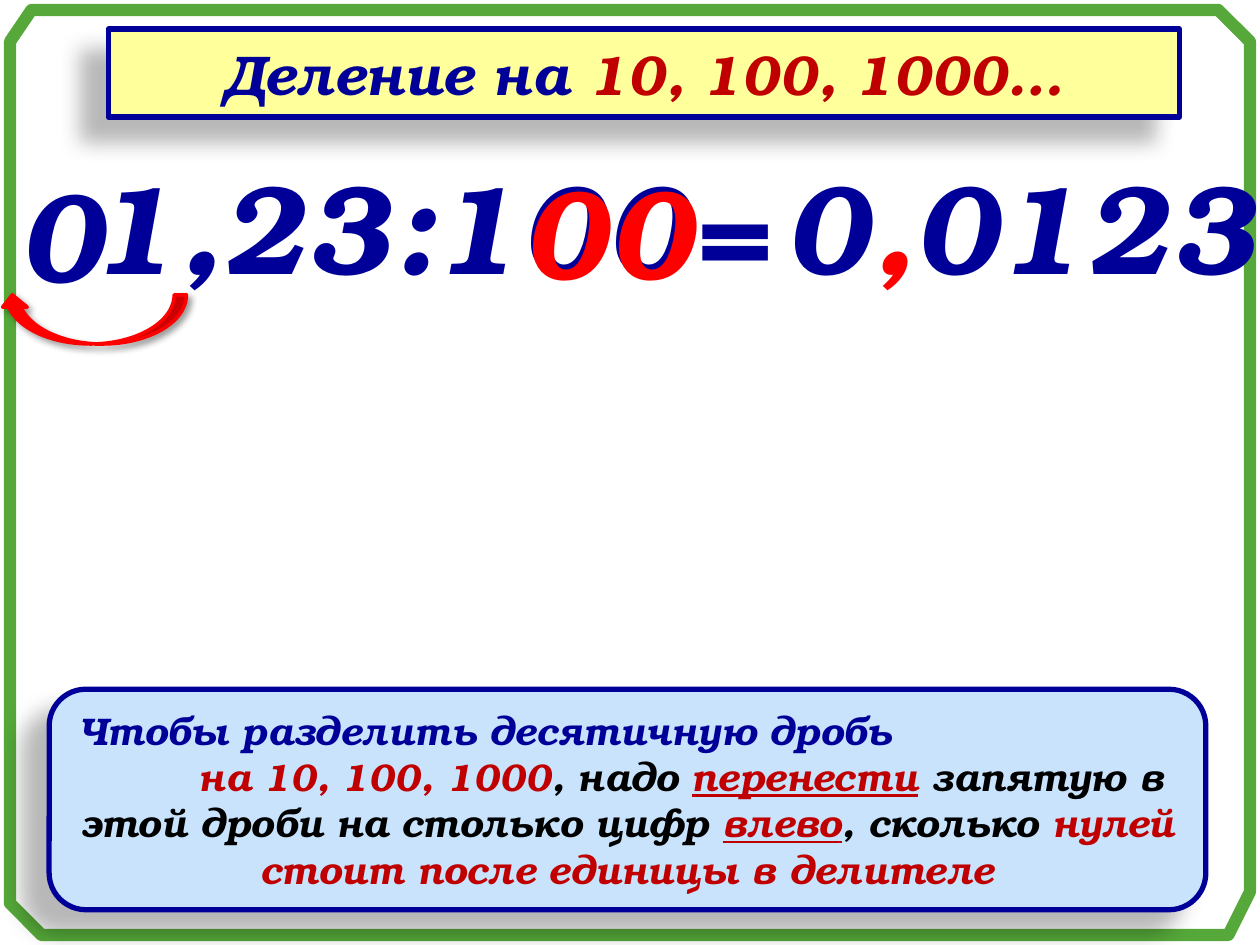
import pptx
import pptx.util
import pptx.dml.color
import pptx.enum.shapes
import pptx.enum.text
from lxml import etree
from pptx.util import Inches, Pt

HUES = {"navy": "000099", "crimson": "C00000", "red": "FF0000", "black": "000000",
        "yellow": "FFFF9B", "sky": "C8E3FB", "green": "55A839"}
FONT = "TeX Gyre Bonum"
KIND = pptx.enum.shapes.MSO_SHAPE
ALIGN = pptx.enum.text.PP_ALIGN
ANCHOR = pptx.enum.text.MSO_ANCHOR


def rgb(hue):
    return pptx.dml.color.RGBColor.from_string(HUES[hue])


def write(para, size, runs):
    """Add (text, hue) runs; a third item marks an underlined one."""
    for text, hue, *under in runs:
        run = para.add_run()
        run.text = text
        font = run.font
        font.name, font.size = FONT, Pt(size)
        font.bold = font.italic = True
        font.color.rgb = rgb(hue)
        if under:
            font.underline = True


deck = pptx.Presentation()
deck.slide_width, deck.slide_height = Inches(10), Inches(7.5)
slide = deck.slides.add_slide(deck.slide_layouts[5])
shapes = slide.shapes

# Title
title = shapes.title
title.left, title.top = Inches(0.86), Inches(0.23)
title.width, title.height = Inches(8.5), Inches(0.7)
title.text_frame.vertical_anchor = ANCHOR.MIDDLE
head = title.text_frame.paragraphs[0]
head.alignment = ALIGN.CENTER
write(head, 32, [("Деление на ", "navy"), ("10, 100, 1000…", "crimson")])

# Border with cut corners
edge = [(0.08, 0.33), (0.08, 7.17), (0.33, 7.42), (9.75, 7.42),
        (9.92, 7.08), (9.92, 0.33), (9.67, 0.08), (0.25, 0.08)]
pen = shapes.build_freeform(Inches(edge[0][0]), Inches(edge[0][1]))
pen.add_line_segments([(Inches(x), Inches(y)) for x, y in edge[1:]], close=True)
frame = pen.convert_to_shape()
frame.shadow.inherit = False
frame.fill.background()
frame.line.color.rgb, frame.line.width = rgb("green"), Pt(7)

# Rule
rule = shapes.add_shape(KIND.ROUNDED_RECTANGLE,
                        Inches(0.39), Inches(5.47), Inches(9.18), Inches(1.75))
body = rule.text_frame
body.word_wrap = True
body.vertical_anchor = ANCHOR.MIDDLE
first, rest = body.paragraphs[0], body.add_paragraph()
first.alignment, rest.alignment = ALIGN.LEFT, ALIGN.CENTER
first._p.get_or_add_pPr().set("marL", str(Inches(0.05)))
rest._p.get_or_add_pPr().set("indent", str(Inches(0.85)))
write(first, 22, [("Чтобы разделить десятичную дробь", "navy")])
write(rest, 22, [
    ("на 10, 100, 1000", "crimson"), (", надо ", "black"),
    ("перенести", "crimson", True),
    (" запятую в этой дроби на столько цифр ", "black"),
    ("влево", "crimson", True), (", сколько ", "black"),
    ("нулей стоит после единицы в делителе", "crimson")])

# Worked example
sums = [
    (0.63, 1.13, 5.62, [("1,23:100=", "navy")]),
    (6.13, 1.13, 3.98, [("0", "navy"), (",", "red"), ("0123", "navy")]),
    (4.05, 1.17, 1.58, [("00", "red")]),
    (0.05, 1.19, 0.89, [("0", "navy")]),
]
for left, top, width, runs in sums:
    box = shapes.add_textbox(Inches(left), Inches(top), Inches(width), Inches(1.31))
    box.text_frame.word_wrap = False
    write(box.text_frame.paragraphs[0], 72, runs)

# Arrow for the comma's move
arrow = shapes.add_shape(KIND.CURVED_UP_ARROW,
                         Inches(0), Inches(2.34), Inches(1.48), Inches(0.39))
arrow._element.spPr.find(pptx.oxml.ns.qn("a:xfrm")).set("flipH", "1")

# Fill, line and shadow (opacity %, blur pt, distance pt, degrees)
soft, near = (28, 11.8, 19.7, 141), (40, 4, 3, 45)
looks = [(title, "yellow", "navy", 3, soft), (rule, "sky", "navy", 3, soft),
         (arrow, "red", "red", 2, near)]
for shape, fill, line, width, (alpha, blur, dist, turn) in looks:
    shape.fill.solid()
    shape.fill.fore_color.rgb = rgb(fill)
    shape.line.color.rgb, shape.line.width = rgb(line), Pt(width)
    tag = pptx.oxml.ns.qn
    glow = etree.SubElement(shape._element.spPr, tag("a:effectLst"))
    cast = etree.SubElement(glow, tag("a:outerShdw"), blurRad=str(Pt(blur)),
                            dist=str(Pt(dist)), dir=str(turn * 60000),
                            algn="ctr", rotWithShape="0")
    tint = etree.SubElement(cast, tag("a:srgbClr"), val=HUES["black"])
    etree.SubElement(tint, tag("a:alpha"), val=str(alpha * 1000))

deck.save("out.pptx")
